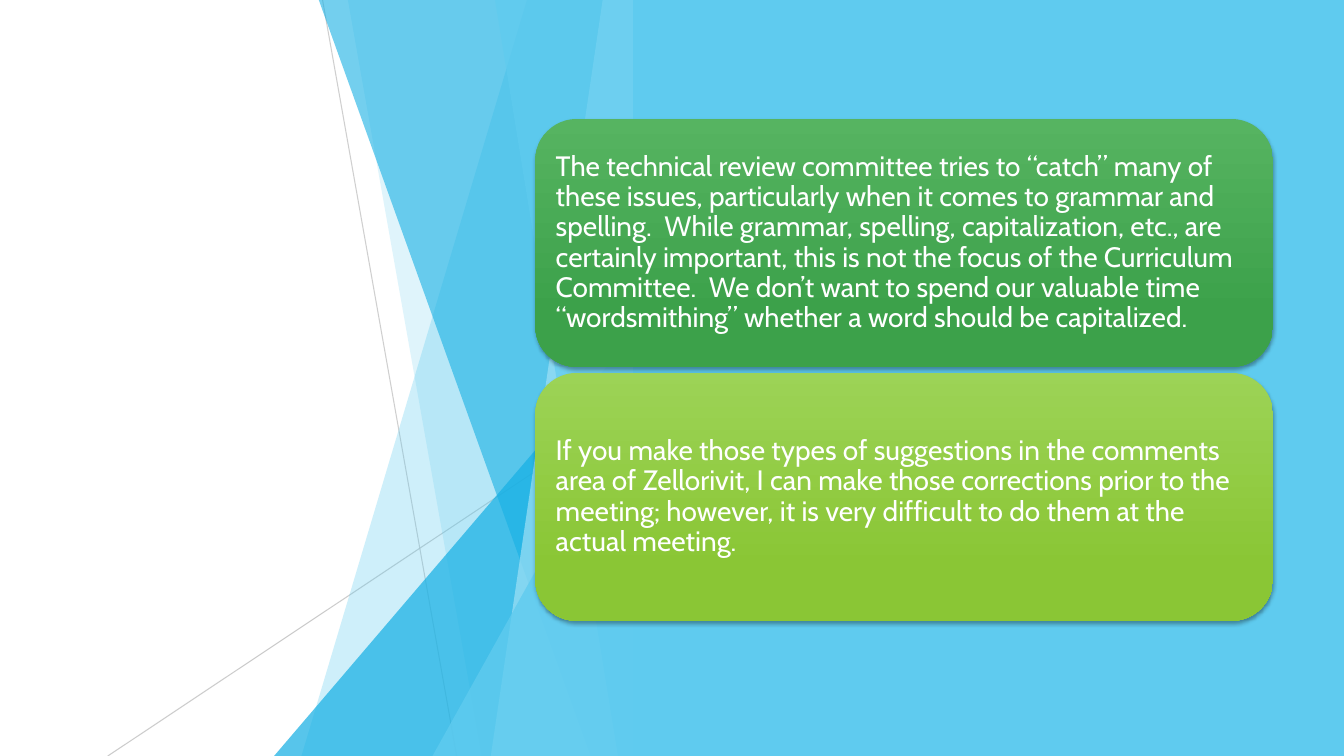
from lxml import etree
from pptx import Presentation
from pptx.dml.color import RGBColor
from pptx.enum import shapes, text
from pptx.oxml import ns
from pptx.util import Pt

# Content
MESSAGES = [
    "The technical review committee tries to “catch” many of these issues, "
    "particularly when it comes to grammar and spelling.  While grammar, spelling, "
    "capitalization, etc., are certainly important, this is not the focus of the "
    "Curriculum Committee.  We don’t want to spend our valuable time "
    "“wordsmithing” whether a word should be capitalized.",
    "If you make those types of suggestions in the comments area of Zellorivit, "
    "I can make those corrections prior to the meeting; however, it is very "
    "difficult to do them at the actual meeting.",
]

# Colours
WHITE = RGBColor(0xFF, 0xFF, 0xFF)
GREY = RGBColor(0xBF, 0xBF, 0xBF)
SKY = RGBColor(0x5F, 0xCB, 0xEF)
BLUE = RGBColor(0x17, 0xB0, 0xE4)
PALE = RGBColor(0x9F, 0xE0, 0xF5)
CARD_GRADIENTS = [
    (RGBColor(0x56, 0xB4, 0x61), RGBColor(0x3C, 0xA1, 0x4A)),
    (RGBColor(0x9C, 0xD3, 0x56), RGBColor(0x8A, 0xC6, 0x35)),
]

# Layout in points
PAGE_W, PAGE_H = 960, 540
PANEL_LEFT = 452.2
BLEED_TOP = -0.6
CARD_LEFT, CARD_TOP, CARD_W, CARD_H = 382.3, 85, 527, 177.1
CARD_STEP = 181.4
INSET = 6

# Thin lines: start, end, opacity
RAYS = [((230.4, 0), (326.2, PAGE_H), 75),
        ((PANEL_LEFT, 290.2), (77, PAGE_H), 80)]

# Facets end at the panel: kind, two measures, colour, opacity
# band: left x at the top, left x at the bottom; peak: left x, top y
FACETS = [
    ("band", 376.6, 215.3, SKY, 30),
    ("band", 248.4, 344.2, SKY, 20),
    ("peak", 195.8, 239.8, BLUE, 72),
    ("band", 227.5, 421.9, BLUE, 60),
    ("band", 430.6, 350.6, PALE, 70),
    ("band", 353.5, 441.4, SKY, 65),
    ("peak", 308.9, 283, SKY, 80),
]


def set_opacity(part, percent):
    for colour in part.element.xpath(".//p:spPr//a:srgbClr"):
        etree.SubElement(colour, ns.qn("a:alpha"), val=str(percent * 1000))


def add_preset(kind, left, top, width, height):
    part = slide.shapes.add_shape(kind, Pt(left), Pt(top), Pt(width), Pt(height))
    part.shadow.inherit = False
    part.line.fill.background()
    return part


def paint(part, colour):
    part.fill.solid()
    part.fill.fore_color.rgb = colour


def add_ray(start, end, opacity):
    ray = slide.shapes.add_connector(
        shapes.MSO_CONNECTOR.STRAIGHT, *(Pt(value) for value in start + end))
    ray.line.color.rgb = GREY
    ray.line.width = Pt(0.75)
    set_opacity(ray, opacity)
    etree.SubElement(ray.element.spPr, ns.qn("a:effectLst"))


def add_band(top_left, bottom_left):
    outline = slide.shapes.build_freeform(Pt(top_left), Pt(BLEED_TOP))
    corners = [(PANEL_LEFT, BLEED_TOP), (PANEL_LEFT, PAGE_H), (bottom_left, PAGE_H)]
    outline.add_line_segments([(Pt(x), Pt(y)) for x, y in corners], close=True)
    band = outline.convert_to_shape()
    band.shadow.inherit = False
    band.line.fill.background()
    return band


def add_peak(left, top):
    peak = add_preset(shapes.MSO_SHAPE.ISOSCELES_TRIANGLE,
                      left, top, PANEL_LEFT - left, PAGE_H - top)
    peak.adjustments[0] = 1
    return peak


def add_card(top, message, gradient):
    card = add_preset(shapes.MSO_SHAPE.ROUNDED_RECTANGLE,
                      CARD_LEFT, top, CARD_W, CARD_H)
    card.fill.gradient()
    card.fill.gradient_angle = 270
    for stop, colour, position in zip(card.fill.gradient_stops, gradient, (0, 0.78)):
        stop.color.rgb = colour
        stop.position = position

    # Soft shadow below the card
    effects = card.element.spPr.find(ns.qn("a:effectLst"))
    shadow = etree.SubElement(
        effects, ns.qn("a:outerShdw"), blurRad=str(Pt(3)), dist=str(Pt(2)),
        dir="5400000", algn="ctr", rotWithShape="0")
    black = etree.SubElement(shadow, ns.qn("a:srgbClr"), val="000000")
    etree.SubElement(black, ns.qn("a:alpha"), val="35000")

    frame = card.text_frame
    frame.word_wrap = True
    frame.vertical_anchor = text.MSO_ANCHOR.MIDDLE
    frame.margin_left = frame.margin_right = Pt(INSET)
    frame.margin_top = frame.margin_bottom = Pt(INSET)
    paragraph = frame.paragraphs[0]
    paragraph.alignment = text.PP_ALIGN.LEFT
    paragraph.line_spacing = 0.9
    run = paragraph.add_run()
    run.text = message
    run.font.name = "Cabin"
    run.font.size = Pt(20)
    run.font.color.rgb = WHITE


deck = Presentation()
deck.slide_width, deck.slide_height = Pt(PAGE_W), Pt(PAGE_H)
slide = deck.slides.add_slide(deck.slide_layouts[6])
slide.background.fill.solid()
slide.background.fill.fore_color.rgb = WHITE

# Faceted backdrop
for ray_spec in RAYS:
    add_ray(*ray_spec)
for kind, first, second, colour, opacity in FACETS:
    facet = add_band(first, second) if kind == "band" else add_peak(first, second)
    paint(facet, colour)
    set_opacity(facet, opacity)

# Right panel
panel = add_preset(shapes.MSO_SHAPE.RECTANGLE,
                   PANEL_LEFT, 0, PAGE_W - PANEL_LEFT, PAGE_H)
paint(panel, SKY)

# Message cards
for row, (message, gradient) in enumerate(zip(MESSAGES, CARD_GRADIENTS)):
    add_card(CARD_TOP + row * CARD_STEP, message, gradient)

deck.save("out.pptx")
